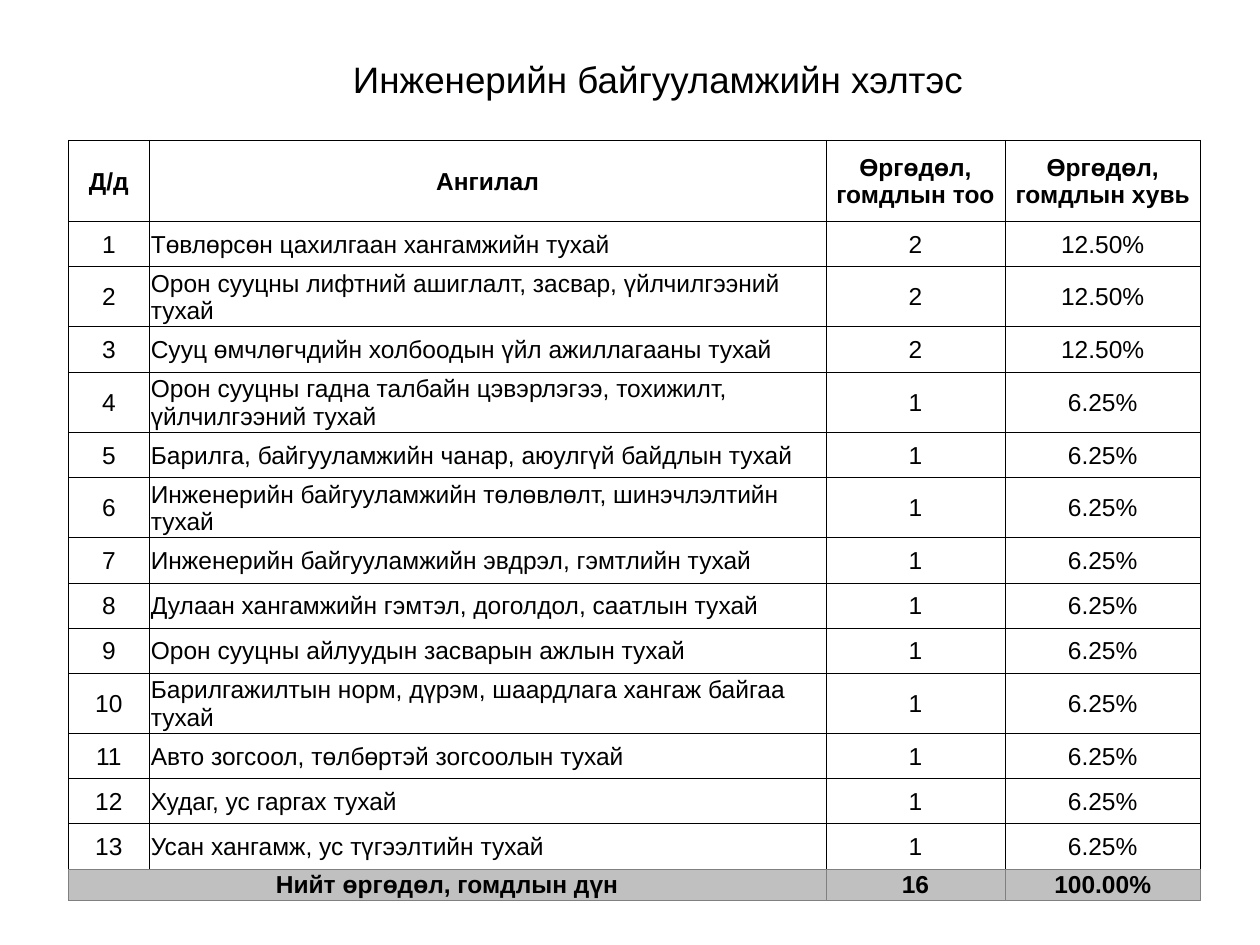
import dataclasses

import lxml.etree
import pptx
import pptx.dml.color
import pptx.enum.text
import pptx.oxml.ns
import pptx.util

Cm = pptx.util.Cm
Align = pptx.enum.text.PP_ALIGN
Anchor = pptx.enum.text.MSO_ANCHOR


@dataclasses.dataclass(frozen=True)
class Theme:
    font: str = "Arial"
    title_size: int = 21
    table_size: int = 14
    ink: str = "000000"
    paper: str = "FFFFFF"
    total_fill: str = "C0C0C0"
    total_line: str = "808080"
    line_width: float = 0.5


THEME = Theme()

TITLE = "Инженерийн байгууламжийн хэлтэс"
HEADINGS = ["Д/д", "Ангилал", "Өргөдөл, гомдлын тоо", "Өргөдөл, гомдлын хувь"]
COMPLAINTS = [
    ("Төвлөрсөн цахилгаан хангамжийн тухай", 2),
    ("Орон сууцны лифтний ашиглалт, засвар, үйлчилгээний тухай", 2),
    ("Сууц өмчлөгчдийн холбоодын үйл ажиллагааны тухай", 2),
    ("Орон сууцны гадна талбайн цэвэрлэгээ, тохижилт, үйлчилгээний тухай", 1),
    ("Барилга, байгууламжийн чанар, аюулгүй байдлын тухай", 1),
    ("Инженерийн байгууламжийн төлөвлөлт, шинэчлэлтийн тухай", 1),
    ("Инженерийн байгууламжийн эвдрэл, гэмтлийн тухай", 1),
    ("Дулаан хангамжийн гэмтэл, доголдол, саатлын тухай", 1),
    ("Орон сууцны айлуудын засварын ажлын тухай", 1),
    ("Барилгажилтын норм, дүрэм, шаардлага хангаж байгаа тухай", 1),
    ("Авто зогсоол, төлбөртэй зогсоолын тухай", 1),
    ("Худаг, ус гаргах тухай", 1),
    ("Усан хангамж, ус түгээлтийн тухай", 1),
]
TOTAL_LABEL = "Нийт өргөдөл, гомдлын дүн"

COLUMN_WIDTHS = [1.63, 13.64, 3.61, 3.94]
HEADER_HEIGHT, ROW_HEIGHT, TWO_LINE_HEIGHT, TOTAL_HEIGHT = 1.63, 0.91, 1.09, 0.48
ONE_LINE_LETTERS = 52  # longer categories wrap to a second line


def write_text(frame, text, *, size, bold=False, align=Align.CENTER, spacing=None):
    paragraph = frame.paragraphs[0]
    paragraph.alignment = align
    if spacing:
        paragraph.line_spacing = spacing
    run = paragraph.add_run()
    run.text = text
    run.font.name = THEME.font
    run.font.size = pptx.util.Pt(size)
    run.font.bold = bold
    run.font.color.rgb = pptx.dml.color.RGBColor.from_string(THEME.ink)


def set_borders(cell, color, bottom):
    properties = cell._tc.get_or_add_tcPr()
    sides = {"lnL": color, "lnR": color, "lnT": color, "lnB": bottom}
    for position, (side, side_color) in enumerate(sides.items()):
        line = lxml.etree.Element(pptx.oxml.ns.qn(f"a:{side}"))
        line.set("w", str(pptx.util.Pt(THEME.line_width)))
        fill = lxml.etree.SubElement(line, pptx.oxml.ns.qn("a:solidFill"))
        lxml.etree.SubElement(fill, pptx.oxml.ns.qn("a:srgbClr")).set("val", side_color)
        properties.insert(position, line)


def format_cell(cell, fill, line, bottom):
    cell.vertical_anchor = Anchor.MIDDLE
    cell.margin_left = cell.margin_top = cell.margin_right = Cm(0.03)
    cell.margin_bottom = 0
    cell.fill.solid()
    cell.fill.fore_color.rgb = pptx.dml.color.RGBColor.from_string(fill)
    set_borders(cell, line, bottom)


def add_title(slide):
    title = slide.shapes.add_textbox(Cm(1.93), Cm(0.74), Cm(21.64), Cm(1.8))
    frame = title.text_frame
    frame.word_wrap = True
    frame.vertical_anchor = Anchor.MIDDLE
    frame.margin_left = Cm(1.28)  # pushes the centred title to the right
    write_text(frame, TITLE, size=THEME.title_size, spacing=0.9)


def add_complaints_table(slide):
    # Contents: heading, numbered categories, total
    total = sum(count for _, count in COMPLAINTS)
    rows = [HEADINGS]
    for number, (category, count) in enumerate(COMPLAINTS, 1):
        rows.append([str(number), category, str(count), f"{count / total:.2%}"])
    rows.append([TOTAL_LABEL, "", str(total), f"{1:.2%}"])
    last = len(rows) - 1

    # Grid
    heights = [HEADER_HEIGHT]
    heights += [TWO_LINE_HEIGHT if len(category) > ONE_LINE_LETTERS else ROW_HEIGHT
                for category, _ in COMPLAINTS]
    heights.append(TOTAL_HEIGHT)
    complaints = slide.shapes.add_table(
        len(rows), len(HEADINGS), Cm(1.38), Cm(2.83),
        Cm(sum(COLUMN_WIDTHS)), Cm(sum(heights))).table
    for column, width in zip(complaints.columns, COLUMN_WIDTHS):
        column.width = Cm(width)
    for row, height in zip(complaints.rows, heights):
        row.height = Cm(height)
    complaints.cell(last, 0).merge(complaints.cell(last, 1))

    # Cells
    for r, texts in enumerate(rows):
        is_total = r == last
        fill = THEME.total_fill if is_total else THEME.paper
        line = THEME.total_line if is_total else THEME.ink
        bottom = THEME.total_line if r >= last - 1 else THEME.ink
        for c, text in enumerate(texts):
            cell = complaints.cell(r, c)
            format_cell(cell, fill, line, bottom)
            if cell.is_spanned:
                continue
            is_category = c == 1 and r > 0
            write_text(cell.text_frame, text, size=THEME.table_size,
                       bold=r in (0, last),
                       align=Align.LEFT if is_category else Align.CENTER)


def main():
    deck = pptx.Presentation()
    deck.slide_width, deck.slide_height = Cm(25.4), Cm(19.05)
    slide = deck.slides.add_slide(deck.slide_layouts[6])
    add_title(slide)
    add_complaints_table(slide)
    deck.save("out.pptx")


if __name__ == "__main__":
    main()
